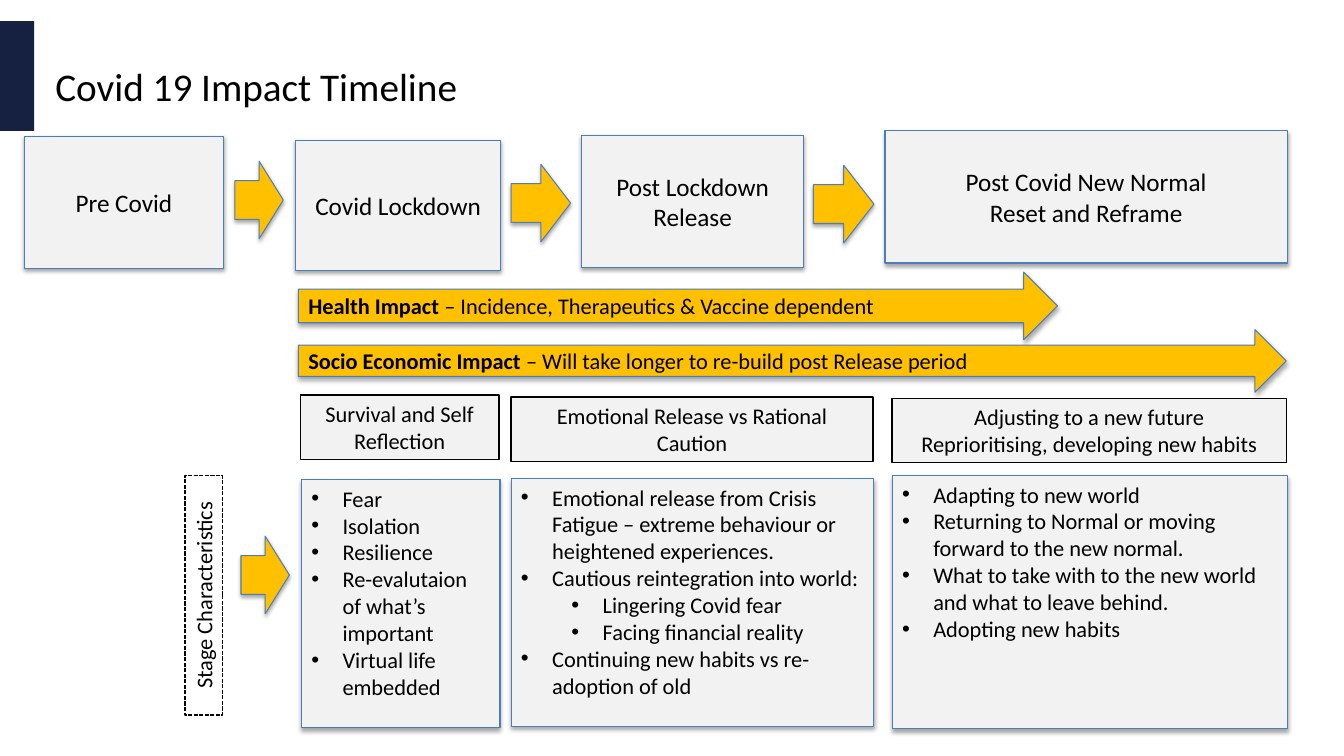
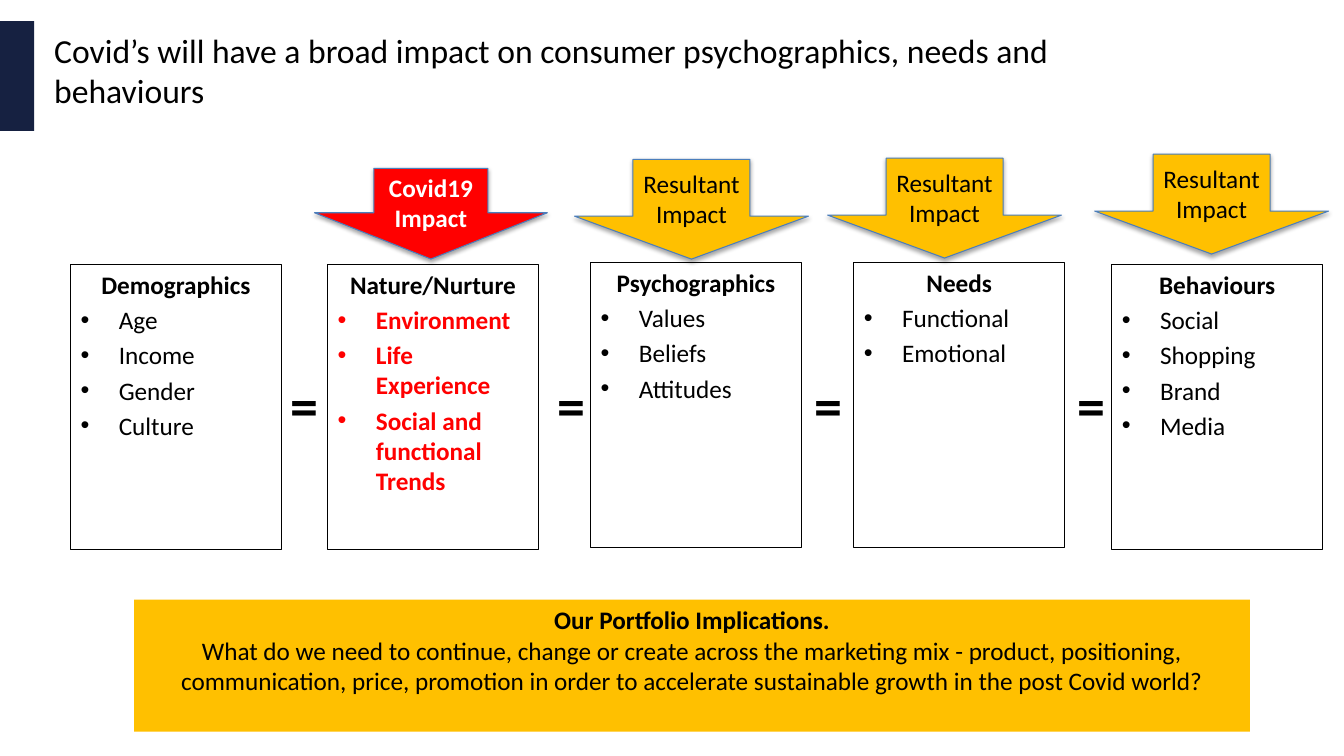
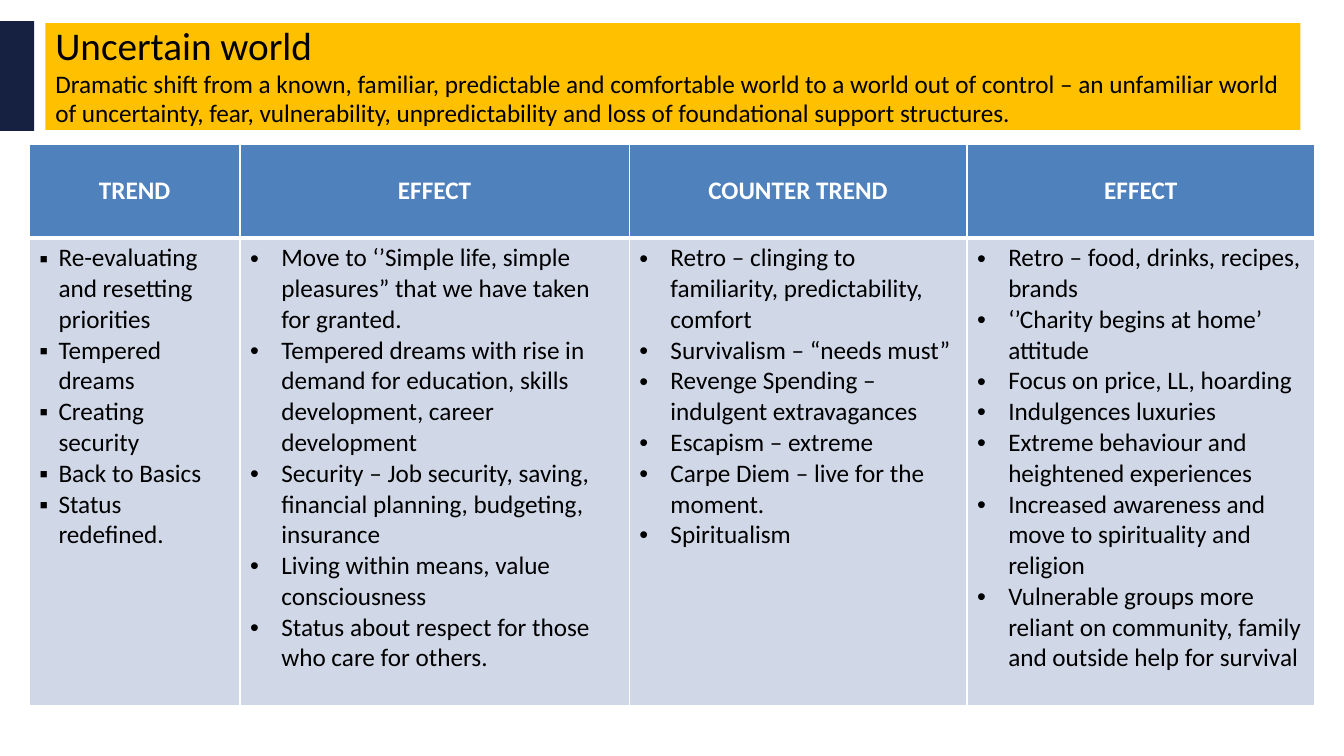
from dataclasses import dataclass

from lxml.etree import SubElement
from pptx import Presentation
from pptx.dml.color import RGBColor
from pptx.enum.dml import MSO_LINE
from pptx.enum.shapes import MSO_SHAPE
from pptx.enum.text import MSO_ANCHOR, PP_ALIGN
from pptx.oxml.ns import qn
from pptx.util import Inches, Pt

WIDE, HIGH = Inches(13.33), Inches(7.5)
RECT, RIGHT, DOWN = MSO_SHAPE.RECTANGLE, MSO_SHAPE.RIGHT_ARROW, MSO_SHAPE.DOWN_ARROW
TOP, MID = MSO_ANCHOR.TOP, MSO_ANCHOR.MIDDLE
LEFT, MIDDLE = PP_ALIGN.LEFT, PP_ALIGN.CENTER


@dataclass(frozen=True)
class Theme:
    font: str = "Calibri"
    ink: str = "000000"
    white: str = "FFFFFF"
    navy: str = "162141"
    gold: str = "FFC000"
    red: str = "FF0000"
    grey: str = "F2F2F2"
    edge: str = "4B7EBC"
    head: str = "4F81BD"
    body: str = "D0D8E8"
    title: int = 28
    subtitle: int = 24
    text: int = 18
    small: int = 16
    sign: int = 40


T = Theme()


@dataclass(frozen=True)
class Line:
    """One paragraph; lead is a bold opening, left the hanging indent in inches."""
    text: str
    lead: str = ""
    size: int = T.text
    bold: bool = False
    ink: str = T.ink
    align: PP_ALIGN = LEFT
    mark: str = ""
    left: float = 0
    hang: float = 0
    before: float = 0
    pitch: float = 1


def style(item, values):
    for name, value in values.items():
        setattr(item, name, value)


def paint(fill, color):
    if color:
        fill.solid()
        fill.fore_color.rgb = RGBColor.from_string(color)
    else:
        fill.background()


def bullet(para, line):
    props = para._p.get_or_add_pPr()
    props.set("marL", str(Inches(line.left)))
    props.set("indent", str(-Inches(line.hang)))
    SubElement(props, qn("a:buFont")).set("typeface", "Arial")
    SubElement(props, qn("a:buChar")).set("char", line.mark)


def write(frame, lines):
    for row, line in enumerate(lines):
        para = frame.add_paragraph() if row else frame.paragraphs[0]
        if line.mark:
            bullet(para, line)
        style(para, {"alignment": line.align, "line_spacing": line.pitch})
        if row and line.before:
            para.space_before = Pt(line.before)
        for text, bold in ((line.lead, True), (line.text, line.bold)):
            if text:
                run = para.add_run()
                run.text = text
                style(run.font, {"name": T.font, "size": Pt(line.size), "bold": bold})
                run.font.color.rgb = RGBColor.from_string(line.ink)


def scale(area):
    """Turn shares of the slide, in percent, into lengths."""
    return [round(part * side / 100) for part, side in zip(area, (WIDE, HIGH) * 2)]


def shade(shape):
    effects = shape._element.spPr.find(qn("a:effectLst"))
    drop = SubElement(effects, qn("a:outerShdw"))
    values = {"blurRad": Pt(3.1), "dist": Pt(1.8), "dir": 90 * 60000, "rotWithShape": 0}
    for name, value in values.items():
        drop.set(name, str(value))
    tint = SubElement(drop, qn("a:srgbClr"))
    tint.set("val", T.ink)
    SubElement(tint, qn("a:alpha")).set("val", "35000")


def block(slide, area, lines=(), kind=RECT, fill=None, edge=None, width=0.75,
          anchor=MID, shadow=False):
    shape = slide.shapes.add_shape(kind, *scale(area))
    shape.shadow.inherit = False
    paint(shape.fill, fill)
    paint(shape.line.fill, edge)
    if edge:
        shape.line.width = Pt(width)
    if shadow:
        shade(shape)
    style(shape.text_frame, {"word_wrap": True, "vertical_anchor": anchor})
    write(shape.text_frame, lines)
    return shape


def raised(slide, area, lines=(), **look):
    """A block with the blue edge and soft shadow."""
    return block(slide, area, lines, edge=T.edge, shadow=True, **look)


def label(slide, area, line, anchor=TOP):
    frame = slide.shapes.add_textbox(*scale(area)).text_frame
    style(frame, {"word_wrap": True, "vertical_anchor": anchor})
    write(frame, [line])


def center(texts, **look):
    return [Line(text, align=MIDDLE, **look) for text in texts]


def points(texts, mark="•", left=0.31, **look):
    return [Line(text, mark=mark, left=left, hang=left, **look) for text in texts]


def base(deck):
    slide = deck.slides.add_slide(deck.slide_layouts[6])
    block(slide, (0, 2.8, 2.55, 14.53), fill=T.navy)
    return slide


def border(cell, sides):
    props = cell._tc.get_or_add_tcPr()
    for place, (side, width) in enumerate(sides.items()):
        line = SubElement(props, qn("a:ln" + side))
        line.set("w", str(Pt(width)))
        solid = SubElement(line, qn("a:solidFill"))
        SubElement(solid, qn("a:srgbClr")).set("val", T.white)
        props.insert(place, line)


def grid(slide, area, cols, rows, cells):
    table = slide.shapes.add_table(len(rows), len(cols), *scale(area)).table
    style(table, {"first_row": False, "horz_banding": False})
    for col, size in zip(table.columns, cols):
        col.width = Inches(size)
    for row, size in zip(table.rows, rows):
        row.height = Inches(size)
    for r, group in enumerate(cells):
        for c, lines in enumerate(group):
            cell = table.cell(r, c)
            cell.vertical_anchor = TOP if r else MID
            paint(cell.fill, T.body if r else T.head)
            border(cell, {"L": 1, "R": 1, "T": 3 if r else 1, "B": 1 if r else 3})
            write(cell.text_frame, lines)


def timeline(deck):
    slide = base(deck)
    label(slide, (3.38, 3.07, 90, 16.67),
          Line("Covid 19 Impact Timeline", size=T.title), MID)

    stages = [
        ((1.8, 18, 14.85, 17.47), ["Pre Covid"]),
        ((21.98, 18.53, 15.3, 17.2), ["Covid Lockdown"]),
        ((43.28, 17.87, 16.5, 17.47), ["Post Lockdown Release"]),
        ((65.85, 17.33, 29.93, 17.47), ["Post Covid New Normal", "Reset and Reframe"]),
    ]
    for area, texts in stages:
        raised(slide, area, center(texts), fill=T.grey)

    for x, y, w in ((17.48, 21.33, 3.6), (38.03, 21.73, 4.43),
                    (60.53, 21.87, 4.5), (17.93, 70.93, 3.6)):
        raised(slide, (x, y, w, 10.27), kind=RIGHT, fill=T.gold)

    impacts = [
        ((22.2, 36, 56.48, 8.93), "Health Impact ",
         "– Incidence, Therapeutics & Vaccine dependent"),
        ((22.2, 43.6, 73.5, 8.27), "Socio Economic Impact ",
         "– Will take longer to re-build post Release period"),
    ]
    for area, lead, text in impacts:
        raised(slide, area, [Line(text, lead, T.small)], kind=RIGHT, fill=T.gold)

    heads = [
        ((22.35, 52.27, 14.78, 8.53), ["Survival and Self Reflection"]),
        ((38.03, 52.53, 26.93, 8.53), ["Emotional Release vs Rational Caution"]),
        ((66.38, 52.67, 29.33, 8.53),
         ["Adjusting to a new future", "Reprioritising, developing new habits"]),
    ]
    for area, texts in heads:
        block(slide, area, center(texts, size=T.small), fill=T.grey,
              edge=T.ink, width=1, anchor=TOP)

    small = {"size": T.small}
    traits = [
        ((22.43, 63.47, 14.78, 32.8), points([
            "Fear", "Isolation", "Resilience",
            "Re-evalutaion of what’s important", "Virtual life embedded"], **small)),
        ((38.03, 63.33, 27, 32.8), [
            *points(["Emotional release from Crisis Fatigue – extreme behaviour "
                     "or heightened experiences.",
                     "Cautious reintegration into world:"], **small),
            *[Line(text, mark="•", left=0.81, hang=0.31, **small)
              for text in ("Lingering Covid fear", "Facing financial reality")],
            *points(["Continuing new habits vs re-adoption of old"], **small)]),
        ((66.38, 62.93, 29.4, 33.47), points([
            "Adapting to new world",
            "Returning to Normal or moving forward to the new normal.",
            "What to take with to the new world and what to leave behind.",
            "Adopting new habits"], **small)),
    ]
    for area, lines in traits:
        raised(slide, area, lines, fill=T.grey, anchor=TOP)

    side = block(slide, (6.23, 76.27, 17.85, 4.93),
                 center(["Stage Characteristics"], **small),
                 fill=T.white, edge=T.ink, width=1, anchor=TOP)
    side.rotation = 270
    side.line.dash_style = MSO_LINE.SQUARE_DOT


def impact(deck):
    slide = base(deck)
    label(slide, (3.3, 2, 82.13, 14.53),
          Line("Covid’s will have a broad impact on consumer psychographics, "
               "needs and behaviours", size=T.subtitle), MID)

    plain, hot = {}, {"bold": True, "ink": T.red}
    factors = [
        (5.25, 34.93, "Demographics", ["Age", "Income", "Gender", "Culture"], plain),
        (24.38, 34.93, "Nature/Nurture",
         ["Environment", "Life Experience", "Social and functional Trends"], hot),
        (43.95, 34.67, "Psychographics", ["Values", "Beliefs", "Attitudes"], plain),
        (63.53, 34.67, "Needs", ["Functional", "Emotional"], plain),
        (82.73, 34.93, "Behaviours", ["Social", "Shopping", "Brand", "Media"], plain),
    ]
    for x, y, head, texts, look in factors:
        lines = center([head], bold=True) + points(texts, left=0.38, before=3.6, **look)
        block(slide, (x, y, 15.68, 37.73), lines, edge=T.ink, anchor=TOP)

    for x in (20.85, 40.73, 59.85, 79.43):
        label(slide, (x, 48.33, 3.23, 10.27), Line("=", size=T.sign, bold=True))

    result = ("Resultant Impact", T.gold, {}, (0.5, 0.43))
    causes = [
        ((23.4, 22.27, 17.33, 12),
         ("Covid19 Impact", T.red, {"bold": True, "ink": T.white}, (0.49, 0.51))),
        ((42.75, 21.07, 17.4, 13.2), result),
        ((61.58, 20.93, 17.4, 13.2), result),
        ((81.45, 20.4, 17.4, 13.2), result),
    ]
    for area, (text, fill, look, bends) in causes:
        arrow = raised(slide, area, center([text], **look), kind=DOWN, fill=fill)
        for place, bend in enumerate(bends):
            arrow.adjustments[place] = bend

    block(slide, (9.98, 79.33, 83.03, 17.47), [
        *center(["Our Portfolio Implications."], bold=True),
        *center(["What do we need to continue, change or create across the marketing "
                 "mix - product, positioning, communication, price, promotion in order "
                 "to accelerate sustainable growth in the post Covid world?"])],
        fill=T.gold, anchor=TOP)


def trends(deck):
    slide = base(deck)
    heads = ["TREND", "EFFECT", "COUNTER TREND", "EFFECT"]
    lists = [
        points(["Re-evaluating and resetting priorities", "Tempered dreams",
                "Creating security", "Back to Basics", "Status redefined."],
               mark="▪", left=0.19),
        points(["Move to ‘’Simple life, simple pleasures” that we have taken for granted.",
                "Tempered dreams with rise in demand for education, skills "
                "development, career development",
                "Security – Job security, saving, financial planning, budgeting, insurance",
                "Living within means, value consciousness",
                "Status about respect for those who care for others."]),
        points(["Retro – clinging to familiarity, predictability, comfort",
                "Survivalism – “needs must”",
                "Revenge Spending – indulgent extravagances",
                "Escapism – extreme",
                "Carpe Diem – live for the moment.",
                "Spiritualism"]),
        points(["Retro – food, drinks, recipes, brands",
                "‘’Charity begins at home’ attitude",
                "Focus on price, LL, hoarding",
                "Indulgences luxuries",
                "Extreme behaviour and heightened experiences",
                "Increased awareness and move to spirituality and religion",
                "Vulnerable groups more reliant on community, family and "
                "outside help for survival"]),
    ]
    top = [center([head], bold=True, ink=T.white) for head in heads]
    grid(slide, (2.18, 19.07, 95.63, 74.27), (2.09, 3.86, 3.35, 3.45),
         (0.93, 4.64), (top, lists))
    block(slide, (3.38, 3.07, 93.38, 14.13), [
        Line("Uncertain world", size=T.title, pitch=0.97),
        Line("Dramatic shift from a known, familiar, predictable and comfortable world "
             "to a world out of control – an unfamiliar world of uncertainty, fear, "
             "vulnerability, unpredictability and loss of foundational support "
             "structures.", pitch=0.97)], fill=T.gold)


def main():
    deck = Presentation()
    style(deck, {"slide_width": WIDE, "slide_height": HIGH})
    for build in (timeline, impact, trends):
        build(deck)
    deck.save("out.pptx")


if __name__ == "__main__":
    main()
